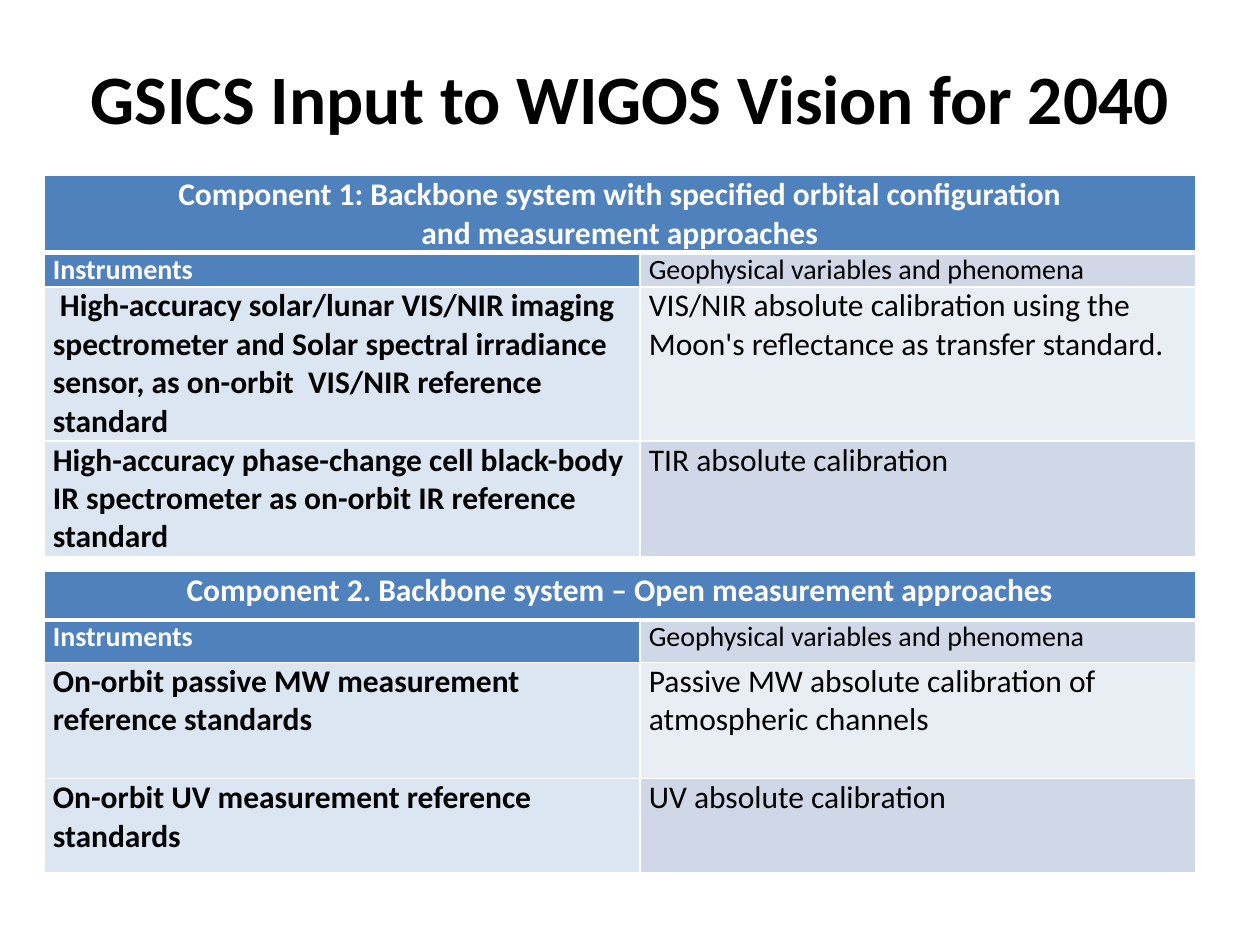
from dataclasses import dataclass

from lxml import etree
from pptx import Presentation
from pptx import util as u
from pptx.dml.color import RGBColor
from pptx.enum import text
from pptx.oxml import ns

WIDTH, HEIGHT = u.Inches(10), u.Inches(7.5)
FONT = "Calibri"
BLACK = RGBColor(0x00, 0x00, 0x00)
WHITE = RGBColor(0xFF, 0xFF, 0xFF)
BLUE = RGBColor(0x4F, 0x81, 0xBD)
PALE_BLUE = RGBColor(0xDC, 0xE6, 0xF2)
BAND_DARK = RGBColor(0xD0, 0xD8, 0xE8)
BAND_LIGHT = RGBColor(0xE9, 0xED, 0xF4)

LEFT = 0.035
COLUMNS = (0.473, 0.441)
MARGIN = u.Inches(0.07)
THIN, THICK = 1, 3


@dataclass(frozen=True)
class Component:
    heading: str
    top: float
    rows: tuple[float, ...]
    entries: tuple[tuple[str, str], ...]


COMPONENTS = (
    Component(
        "Component 1: Backbone system with specified orbital configuration\v"
        "and measurement approaches",
        0.186,
        (0.08, 0.036, 0.163, 0.121),
        (
            (" High-accuracy solar/lunar VIS/NIR imaging spectrometer and Solar "
             "spectral irradiance sensor, as on-orbit  VIS/NIR reference standard",
             "VIS/NIR absolute calibration using the Moon's reflectance as "
             "transfer standard."),
            ("High-accuracy phase-change cell black-body IR spectrometer as "
             "on-orbit IR reference standard",
             "TIR absolute calibration"),
        ),
    ),
    Component(
        "Component 2. Backbone system – Open measurement approaches",
        0.605,
        (0.051, 0.045, 0.123, 0.1),
        (
            ("On-orbit passive MW measurement reference standards",
             "Passive MW absolute calibration of atmospheric channels"),
            ("On-orbit UV measurement reference standards",
             "UV absolute calibration"),
        ),
    ),
)


def write(frame, words: str, *, size: float = 18, bold: bool = False,
          color: RGBColor = BLACK, align=text.PP_ALIGN.LEFT) -> None:
    frame.word_wrap = True
    paragraph = frame.paragraphs[0]
    paragraph.text = words
    paragraph.alignment = align
    paragraph.space_before = u.Pt(0)
    for run in paragraph.runs:
        run.font.name = FONT
        run.font.size = u.Pt(size)
        run.font.bold = bold
        run.font.color.rgb = color


def outline(cell, *, top: float = THIN, bottom: float = THIN) -> None:
    properties = cell._tc.get_or_add_tcPr()
    edges = (("lnL", THIN), ("lnR", THIN), ("lnT", top), ("lnB", bottom))
    for position, (edge, points) in enumerate(edges):
        line = etree.Element(ns.qn(f"a:{edge}"), w=str(u.Pt(points)))
        fill = etree.SubElement(line, ns.qn("a:solidFill"))
        etree.SubElement(fill, ns.qn("a:srgbClr"), val=str(WHITE))
        properties.insert(position, line)


def fill_cell(cell, words: str, fill: RGBColor, *, top: float = THIN,
              bottom: float = THIN, **text_format) -> None:
    cell.margin_left = cell.margin_right = MARGIN
    cell.margin_top = cell.margin_bottom = 0
    cell.vertical_anchor = text.MSO_ANCHOR.TOP
    cell.fill.solid()
    cell.fill.fore_color.rgb = fill
    outline(cell, top=top, bottom=bottom)
    write(cell.text_frame, words, **text_format)


def draw_component(slide, component: Component) -> None:
    table = slide.shapes.add_table(
        len(component.rows), len(COLUMNS),
        int(LEFT * WIDTH), int(component.top * HEIGHT),
        int(sum(COLUMNS) * WIDTH), int(sum(component.rows) * HEIGHT)).table
    for column, share in zip(table.columns, COLUMNS):
        column.width = int(share * WIDTH)
    for row, share in zip(table.rows, component.rows):
        row.height = int(share * HEIGHT)

    heading = table.cell(0, 0)
    heading.merge(table.cell(0, 1))
    fill_cell(heading, component.heading, BLUE, bottom=THICK, bold=True,
              color=WHITE, align=text.PP_ALIGN.CENTER)
    fill_cell(table.cell(0, 1), "", BLUE, bottom=THICK)
    fill_cell(table.cell(1, 0), "Instruments", BLUE, top=THICK, size=16,
              bold=True, color=WHITE)
    fill_cell(table.cell(1, 1), "Geophysical variables and phenomena",
              BAND_DARK, top=THICK, size=16)
    bands = (BAND_LIGHT, BAND_DARK)
    for row, ((instrument, variable), band) in enumerate(
            zip(component.entries, bands), start=2):
        fill_cell(table.cell(row, 0), instrument, PALE_BLUE, bold=True)
        fill_cell(table.cell(row, 1), variable, band)


def main() -> None:
    deck = Presentation()
    deck.slide_width, deck.slide_height = WIDTH, HEIGHT
    slide = deck.slides.add_slide(deck.slide_layouts.get_by_name("Title Only"))

    title = slide.shapes.title
    title.left, title.top = int(0.05 * WIDTH), int(0.04 * HEIGHT)
    title.width, title.height = int(0.9 * WIDTH), int(0.124 * HEIGHT)
    title.text_frame.auto_size = text.MSO_AUTO_SIZE.NONE
    title.text_frame.vertical_anchor = text.MSO_ANCHOR.MIDDLE
    write(title.text_frame, "GSICS Input to WIGOS Vision for 2040",
          size=39.6, bold=True, align=text.PP_ALIGN.CENTER)

    for component in COMPONENTS:
        draw_component(slide, component)
    deck.save("out.pptx")


if __name__ == "__main__":
    main()
